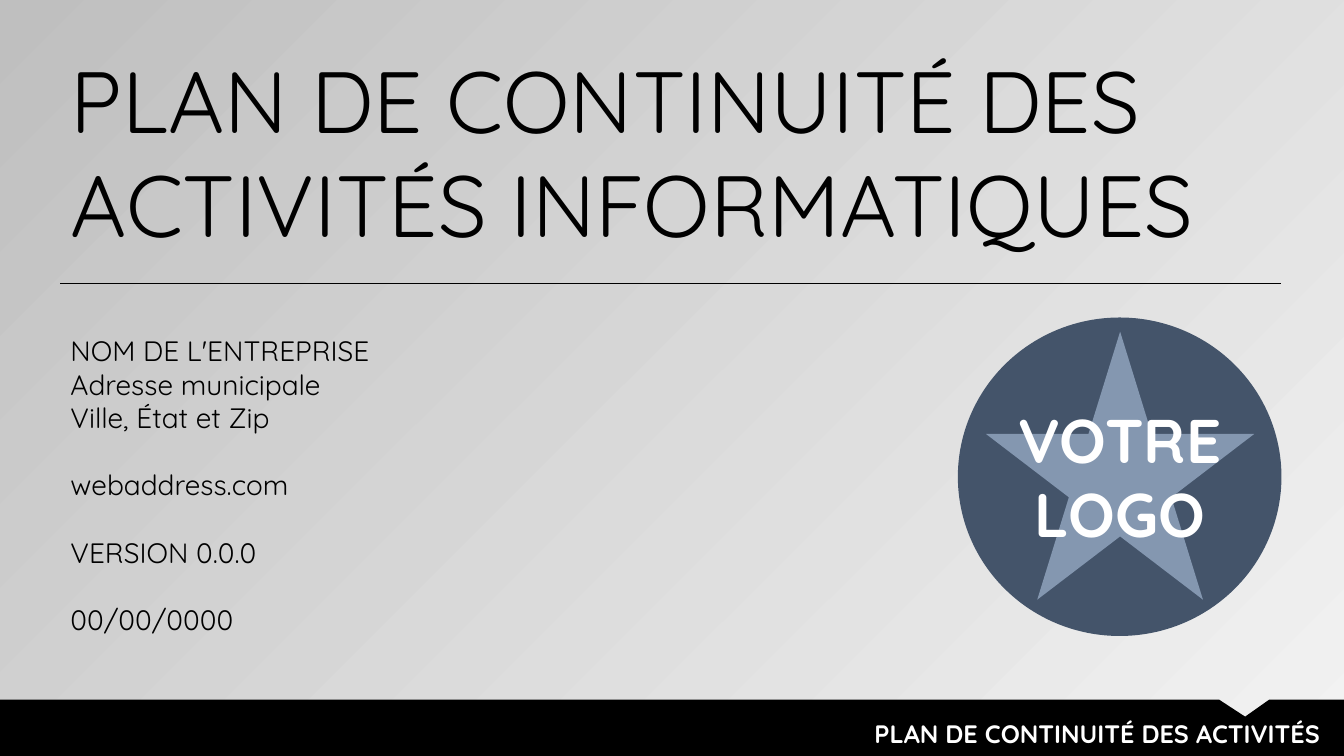
from dataclasses import dataclass

from lxml import etree
from pptx import Presentation
from pptx import util as u
from pptx.dml import color
from pptx.enum import shapes, text
from pptx.oxml import ns


@dataclass(frozen=True)
class Theme:
    font: str = "Quicksand"
    black: str = "000000"
    white: str = "FFFFFF"
    light: str = "F2F2F2"
    grey: str = "BFBFBF"
    navy: str = "44546A"
    steel: str = "8497B0"
    title: int = 62
    logo: int = 44
    details: int = 20
    footer: int = 18


theme = Theme()


def rgb(value):
    return color.RGBColor.from_string(value)


def add_text(parent, lines, box, size, ink=theme.black, bold=False,
             align=text.PP_ALIGN.LEFT, gaps=()):
    label = parent.add_textbox(*map(u.Inches, box))
    frame = label.text_frame
    frame.word_wrap = True
    frame.auto_size = text.MSO_AUTO_SIZE.SHAPE_TO_FIT_TEXT
    for index, line in enumerate(lines):
        paragraph = frame.paragraphs[0] if index == 0 else frame.add_paragraph()
        paragraph.alignment = align
        if index in gaps:
            paragraph.space_before = u.Pt(24)
        run = paragraph.add_run()
        run.text = line
        run.font.name = theme.font
        run.font.size = u.Pt(size)
        run.font.bold = bold
        run.font.color.rgb = rgb(ink)


deck = Presentation()
deck.slide_width = u.Inches(13.33)
deck.slide_height = u.Inches(7.5)
cover = deck.slides.add_slide(deck.slide_layouts[6])

backdrop = cover.background.fill
backdrop.gradient()
backdrop.gradient_angle = 135
for stop, tone in zip(backdrop.gradient_stops, (theme.light, theme.grey)):
    stop.color.rgb = rgb(tone)
backdrop.gradient_stops[0].position = 0
backdrop.gradient_stops[1].position = 1

band_outline = [(12.09, 6.94), (12.35, 7.11), (12.59, 6.94),
                (13.33, 6.94), (13.33, 7.51), (0, 7.51)]
band_builder = cover.shapes.build_freeform(u.Inches(0), u.Inches(6.94))
band_builder.add_line_segments(
    [(u.Inches(x), u.Inches(y)) for x, y in band_outline], close=True)
footer_band = band_builder.convert_to_shape()
footer_band.shadow.inherit = False
footer_band.fill.solid()
footer_band.fill.fore_color.rgb = rgb(theme.black)
footer_band.line.fill.background()

add_text(cover.shapes, ["PLAN DE CONTINUITÉ DES ACTIVITÉS"],
         (6.41, 7.08, 6.78, 0.4), theme.footer, ink=theme.white, bold=True,
         align=text.PP_ALIGN.RIGHT)
add_text(cover.shapes, ["PLAN DE CONTINUITÉ DES ACTIVITÉS INFORMATIQUES"],
         (0.6, 0.41, 12.27, 2.19), theme.title)
add_text(cover.shapes,
         ["NOM DE L'ENTREPRISE", "Adresse municipale", "Ville, État et Zip",
          "webaddress.com", "VERSION 0.0.0", "00/00/0000"],
         (0.6, 3.26, 8.59, 3.13), theme.details, gaps=(3, 4, 5))

title_rule = cover.shapes.add_connector(
    shapes.MSO_CONNECTOR.STRAIGHT,
    u.Inches(0.6), u.Inches(2.81), u.Inches(12.71), u.Inches(2.81))
title_rule.line.color.rgb = rgb(theme.black)
title_rule.line.width = u.Pt(0.5)
etree.SubElement(title_rule._element.spPr, ns.qn("a:effectLst"))

logo = cover.shapes.add_group_shape()
for preset, box, tone in (
    (shapes.MSO_SHAPE.OVAL, (9.5, 3.15, 3.21, 3.16), theme.navy),
    (shapes.MSO_SHAPE.STAR_5_POINT, (9.78, 3.29, 2.66, 2.66), theme.steel),
):
    emblem = logo.shapes.add_shape(preset, *map(u.Inches, box))
    emblem.shadow.inherit = False
    emblem.fill.solid()
    emblem.fill.fore_color.rgb = rgb(tone)
    emblem.line.fill.background()
add_text(logo.shapes, ["VOTRE", "LOGO"], (9.78, 3.94, 2.66, 1.58), theme.logo,
         ink=theme.white, bold=True, align=text.PP_ALIGN.CENTER)

deck.save("out.pptx")
